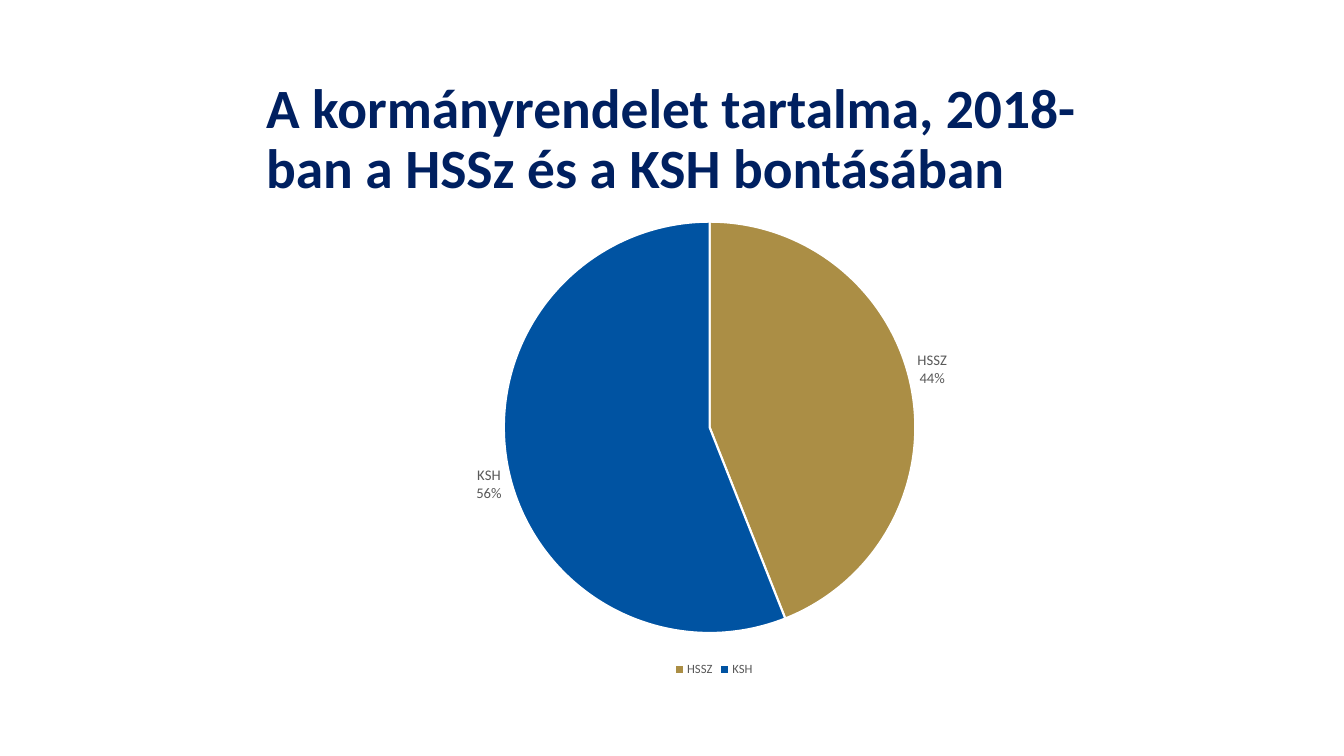
from lxml.etree import SubElement
from pptx import Presentation
from pptx.chart.data import CategoryChartData
from pptx.dml.color import RGBColor
from pptx.enum.chart import XL_CHART_TYPE as ChartType
from pptx.enum.chart import XL_LABEL_POSITION as LabelPosition
from pptx.enum.chart import XL_LEGEND_POSITION as LegendPosition
from pptx.enum.text import MSO_ANCHOR as Anchor
from pptx.enum.text import MSO_AUTO_SIZE as AutoSize
from pptx.enum.text import PP_ALIGN as Align
from pptx.oxml.ns import qn
from pptx.util import Inches, Pt

NAVY = RGBColor(0x00, 0x20, 0x60)
GOLD = RGBColor(0xAB, 0x8E, 0x45)
BLUE = RGBColor(0x00, 0x53, 0xA2)
GRAY = RGBColor(0x59, 0x59, 0x59)
BLACK = RGBColor(0x00, 0x00, 0x00)
WHITE = RGBColor(0xFF, 0xFF, 0xFF)


class SlideBuilder:
    """Holds the style and the current slide, and adds elements in px."""

    font_name = "Calibri"
    emu_per_px = 914400 / 100.8
    title_only_layout = 5

    def __init__(self, presentation):
        layout = presentation.slide_layouts[self.title_only_layout]
        self.slide = presentation.slides.add_slide(layout)

    def to_emu(self, *lengths):
        return [round(length * self.emu_per_px) for length in lengths]

    def style_font(self, font, size, color, bold=False):
        font.name = self.font_name
        font.size = Pt(size)
        font.bold = bold
        font.color.rgb = color

    def add_title(self, text, left, top, width, height):
        title = self.slide.shapes.title
        title.left, title.top, title.width, title.height = self.to_emu(left, top, width, height)
        text_frame = title.text_frame
        text_frame.text = text
        text_frame.word_wrap = True
        text_frame.auto_size = AutoSize.NONE
        text_frame.vertical_anchor = Anchor.MIDDLE
        paragraph = text_frame.paragraphs[0]
        paragraph.alignment = Align.LEFT
        paragraph.line_spacing = 0.9
        self.style_font(paragraph.runs[0].font, 39.6, NAVY, bold=True)

    def add_pie(self, shares, colors, left, top, width, height, plot_layout):
        chart_data = CategoryChartData()
        chart_data.categories = list(shares)
        chart_data.add_series("Series 1", list(shares.values()))
        box = self.to_emu(left, top, width, height)
        chart = self.slide.shapes.add_chart(ChartType.PIE, *box, chart_data).chart
        self.style_font(chart.font, 10, BLACK)
        chart.has_title = False
        chart.has_legend = True
        chart.legend.position = LegendPosition.BOTTOM
        chart.legend.include_in_layout = False
        self.style_font(chart.legend.font, 9, GRAY)

        plot = chart.plots[0]
        plot.vary_by_categories = True
        for index, color in enumerate(colors):
            point_format = plot.series[0].points[index].format
            point_format.fill.solid()
            point_format.fill.fore_color.rgb = color
            point_format.line.color.rgb = WHITE
            point_format.line.width = Pt(1.5)
        self.add_labels(plot, chart)
        self.place_plot(chart, plot_layout)

    def add_labels(self, plot, chart):
        plot.has_data_labels = True
        labels = plot.data_labels
        labels.show_category_name = True
        labels.show_percentage = True
        labels.show_value = False
        labels.number_format = "0%"
        labels.number_format_is_linked = False
        labels.position = LabelPosition.OUTSIDE_END
        self.style_font(labels.font, 10.5, GRAY)
        label_list = next(chart.element.iter(qn("c:dLbls")))
        separator = SubElement(label_list, qn("c:separator"))
        separator.text = "\n"
        label_list.find(qn("c:showBubbleSize")).addnext(separator)

    def place_plot(self, chart, plot_layout):
        plot_area = next(chart.element.iter(qn("c:plotArea")))
        for old_layout in plot_area.findall(qn("c:layout")):
            plot_area.remove(old_layout)
        layout = SubElement(plot_area, qn("c:layout"))
        plot_area.insert(0, layout)
        manual = SubElement(layout, qn("c:manualLayout"))
        settings = {"layoutTarget": "inner", "xMode": "edge", "yMode": "edge", **plot_layout}
        for name, value in settings.items():
            SubElement(manual, qn(f"c:{name}")).set("val", str(value))


def main():
    presentation = Presentation()
    presentation.slide_width = Inches(13.33)
    presentation.slide_height = Inches(7.5)
    builder = SlideBuilder(presentation)
    builder.add_title(
        "A kormányrendelet tartalma, 2018-ban a HSSz és a KSH bontásában", 256, 94, 914, 93
    )
    builder.add_pie(
        {"HSSZ": 44, "KSH": 56},
        [GOLD, BLUE],
        257, 207, 914, 474,
        {"x": 0.27, "y": 0.03, "w": 0.45, "h": 0.87},
    )
    presentation.save("out.pptx")


if __name__ == "__main__":
    main()
